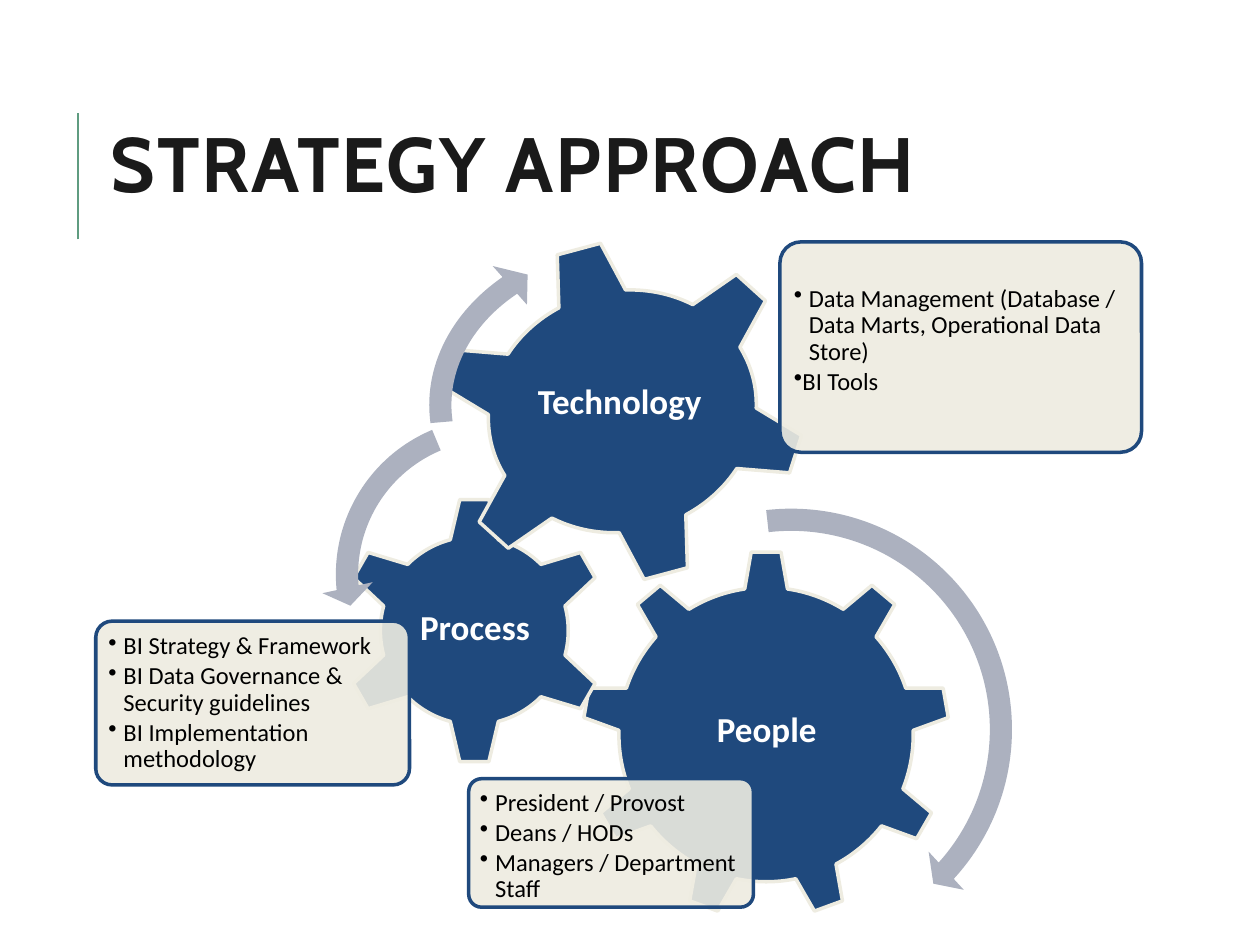
from dataclasses import dataclass
from typing import Any

from lxml import etree
from pptx import Presentation
from pptx.dml.color import RGBColor
from pptx.enum.shapes import MSO_CONNECTOR, MSO_SHAPE
from pptx.enum.text import MSO_ANCHOR, MSO_AUTO_SIZE, PP_ALIGN
from pptx.oxml.ns import qn
from pptx.util import Inches, Pt

GEAR_6, GEAR_9 = MSO_SHAPE.GEAR_6, MSO_SHAPE.GEAR_9
ROUNDED = MSO_SHAPE.ROUNDED_RECTANGLE
ARC, LEFT_ARC = MSO_SHAPE.CIRCULAR_ARROW, MSO_SHAPE.LEFT_CIRCULAR_ARROW
TOP, MIDDLE = MSO_ANCHOR.TOP, MSO_ANCHOR.MIDDLE
LEFT, CENTER = PP_ALIGN.LEFT, PP_ALIGN.CENTER

NAVY, CREAM, GREY = "1F497D", "EEECE1", "ACB1BF"
WHITE, BLACK, INK, GREEN = "FFFFFF", "000000", "1A1A1A", "5F9C80"
HANGING = 0.12

Box = tuple[float, float, float, float]


@dataclass(frozen=True)
class Gear:
    outline: Any
    box: Box
    rotation: float = 0


@dataclass(frozen=True)
class Label:
    text: str
    box: Box
    margin: float | None = 0.03
    wrap: bool = True


@dataclass(frozen=True)
class Bullet:
    text: str
    indent: float = HANGING


@dataclass(frozen=True)
class Panel:
    box: Box
    inset: float
    bullets: tuple[Bullet, ...]
    top_margin: float = 0.06


@dataclass(frozen=True)
class Arrow:
    outline: Any
    box: Box
    adjustments: tuple[float, ...]


# Content, each group from back to front
PEOPLE_GEAR = Gear(GEAR_9, (4.62, 4.37, 2.92, 2.92))
PROCESS_GEAR = Gear(GEAR_6, (2.7, 3.94, 2.13, 2.13))
TECHNOLOGY_GEAR = Gear(GEAR_6, (3.46, 1.9, 2.96, 2.73), 345)

PEOPLE_LABEL = Label("People", (5.21, 5.05, 1.75, 1.5))
PROCESS_LABEL = Label("Process", (3.24, 4.47, 1.06, 1.05))
TECHNOLOGY_LABEL = Label("Technology", (4.17, 2.96, 1.54, 0.44), None, False)

PEOPLE_PANEL = Panel((3.72, 6.18, 2.26, 1.02), 0.03, (
    Bullet("President / Provost"),
    Bullet("Deans / HODs"),
    Bullet("Managers / Department Staff"),
))
PROCESS_PANEL = Panel((0.76, 4.93, 2.49, 1.3), 0.04, (
    Bullet("BI Strategy & Framework"),
    Bullet("BI Data Governance & Security guidelines"),
    Bullet("BI Implementation methodology"),
))
TECHNOLOGY_PANEL = Panel((6.19, 1.92, 2.87, 1.67), 0.05, (
    Bullet("Data Management (Database / Data Marts, Operational Data Store)"),
    Bullet("BI Tools", 0),
), 0.3)

ARROWS = (
    Arrow(ARC, (4.41, 3.92, 3.74, 3.74), (0.047, 2.99, 25.407, 158.095, 0.055)),
    Arrow(LEFT_ARC, (2.55, 3.2, 2.72, 2.72), (0.065, 4.3, 104.891, 148.378, 0.075)),
    Arrow(ARC, (3.29, 1.75, 3.63, 2.93), (0.06, 3.941, 133.138, 105.082, 0.07)),
)


def color(target: Any, value: str) -> None:
    target.rgb = RGBColor.from_string(value)


def assign(target: Any, values: dict[str, Any]) -> None:
    for name, value in values.items():
        setattr(target, name, value)


def add_outline(slide: Any, outline: Any, box: Box, fill: str,
                line: str | None = None) -> Any:
    shape = slide.shapes.add_shape(outline, *map(Inches, box))
    shape.shadow.inherit = False
    shape.fill.solid()
    color(shape.fill.fore_color, fill)
    if line:
        color(shape.line.color, line)
        shape.line.width = Pt(2)
    else:
        shape.line.fill.background()
    return shape


def write(paragraph: Any, text: str, size: float, ink: str, bold: bool,
          layout: dict[str, Any], font: str = "Calibri") -> Any:
    assign(paragraph, layout)
    run = paragraph.add_run()
    run.text = text
    assign(run.font, {"name": font, "size": Pt(size), "bold": bold})
    color(run.font.color, ink)
    return run


def add_text_frame(slide: Any, box: Box, margin: float | None,
                   values: dict[str, Any]) -> Any:
    frame = slide.shapes.add_textbox(*map(Inches, box)).text_frame
    if margin is not None:
        sides = ("left", "top", "right", "bottom")
        assign(frame, {f"margin_{side}": Inches(margin) for side in sides})
    assign(frame, values)
    return frame


def add_gear(slide: Any, gear: Gear) -> None:
    add_outline(slide, gear.outline, gear.box, NAVY, CREAM).rotation = gear.rotation


def add_label(slide: Any, label: Label) -> None:
    values = {"word_wrap": label.wrap, "vertical_anchor": MIDDLE}
    layout = {"alignment": CENTER, "line_spacing": 0.9, "space_after": Pt(7)}
    if not label.wrap:
        values = {"word_wrap": False, "vertical_anchor": TOP,
                  "auto_size": MSO_AUTO_SIZE.SHAPE_TO_FIT_TEXT}
        layout = {"alignment": LEFT}
    frame = add_text_frame(slide, label.box, label.margin, values)
    write(frame.paragraphs[0], label.text, 20, WHITE, True, layout)


def add_panel(slide: Any, panel: Panel) -> None:
    shape = add_outline(slide, ROUNDED, panel.box, CREAM, NAVY)
    shape.adjustments[0] = 0.1
    fill = shape.fill._xPr.find(qn("a:solidFill"))
    etree.SubElement(fill[0], qn("a:alpha"), val="90000")

    left, top, width, height = panel.box
    inset = panel.inset
    inner = (left + inset, top + inset, width - 2 * inset, height - 2 * inset)
    frame = add_text_frame(slide, inner, 0.06, {
        "margin_top": Inches(panel.top_margin), "word_wrap": True,
        "vertical_anchor": TOP})
    layout = {"level": 1, "alignment": LEFT, "line_spacing": 0.9,
              "space_after": Pt(2)}
    for index, bullet in enumerate(panel.bullets):
        paragraph = frame.add_paragraph() if index else frame.paragraphs[0]
        write(paragraph, bullet.text, 14, BLACK, False, layout)
        properties = paragraph._p.get_or_add_pPr()
        properties.set("marL", str(Inches(bullet.indent)))
        properties.set("indent", str(-Inches(bullet.indent)))
        etree.SubElement(properties, qn("a:buChar"), char="•")


def add_arrow(slide: Any, arrow: Arrow) -> None:
    shape = add_outline(slide, arrow.outline, arrow.box, GREY)
    for index, value in enumerate(arrow.adjustments):
        shape.adjustments[index] = value


def add_heading(slide: Any) -> None:
    rule = slide.shapes.add_connector(
        MSO_CONNECTOR.STRAIGHT, *map(Inches, (0.62, 1.9, 0.62, 0.9)))
    color(rule.line.color, GREEN)
    rule.line.width = Pt(1.5)
    etree.SubElement(rule._element.spPr, qn("a:effectLst"))

    title = slide.shapes.title
    assign(title, dict(zip(("left", "top", "width", "height"),
                           map(Inches, (0.78, 0.78, 8.99, 1.15)))))
    assign(title.text_frame, {"vertical_anchor": MIDDLE, "word_wrap": True})
    run = write(title.text_frame.paragraphs[0], "STRATEGY APPROACH", 44, INK, True,
                {"alignment": LEFT, "line_spacing": 0.8}, "Cabin")
    run.font._element.set("spc", "100")


def main() -> None:
    deck = Presentation()
    assign(deck, {"slide_width": Inches(10), "slide_height": Inches(7.5)})
    slide = deck.slides.add_slide(deck.slide_layouts[5])
    add_heading(slide)

    # Gears with their labels and detail panels
    for gear, label, panel in ((PEOPLE_GEAR, PEOPLE_LABEL, PEOPLE_PANEL),
                               (PROCESS_GEAR, PROCESS_LABEL, PROCESS_PANEL)):
        add_gear(slide, gear)
        add_label(slide, label)
        add_panel(slide, panel)
    add_gear(slide, TECHNOLOGY_GEAR)
    add_panel(slide, TECHNOLOGY_PANEL)

    # Rotation arrows, then the label of the top gear
    for arrow in ARROWS:
        add_arrow(slide, arrow)
    add_label(slide, TECHNOLOGY_LABEL)
    deck.save("out.pptx")


if __name__ == "__main__":
    main()
